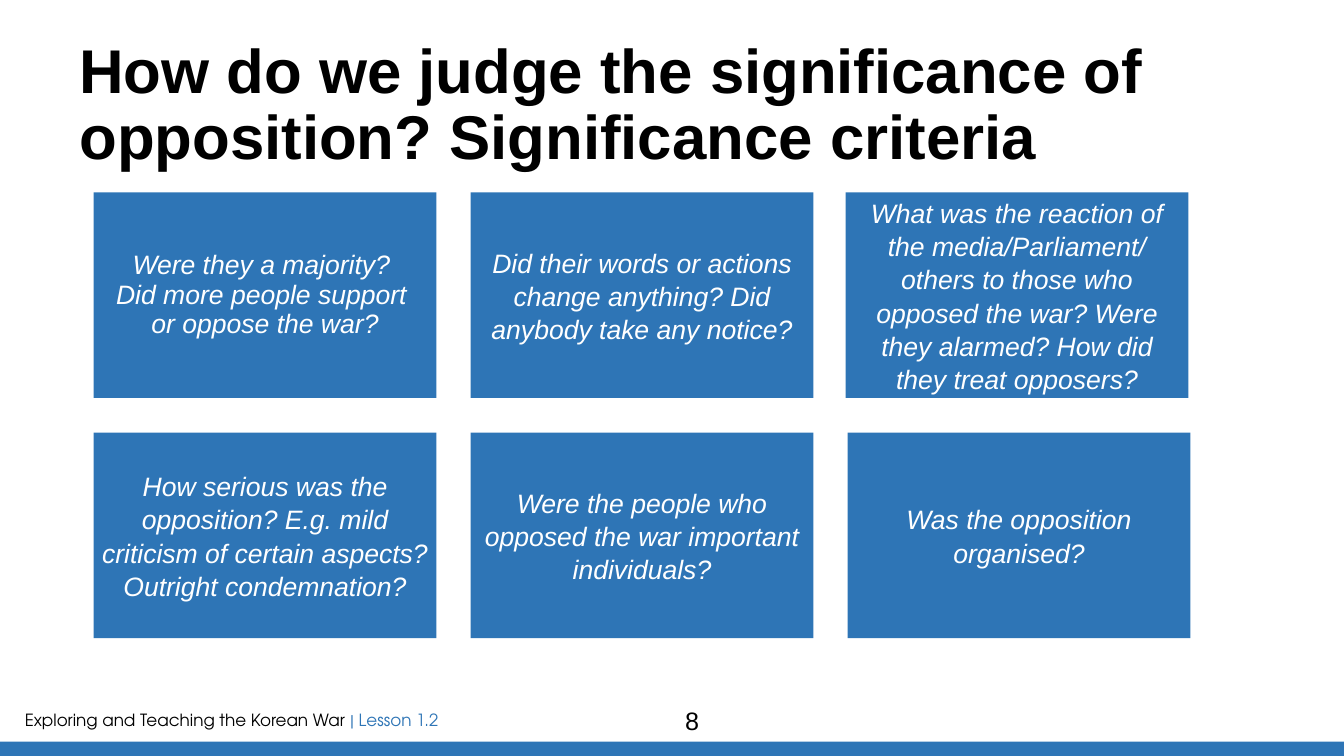
"""Build the slide on judging the significance of opposition."""
from pptx import Presentation
from pptx.dml.color import RGBColor as Rgb
from pptx.enum.shapes import MSO_SHAPE as Shape
from pptx.enum.text import MSO_ANCHOR as Anchor, PP_ALIGN as Align
from pptx.util import Cm, Pt

HUE = {"blue": "2E75B6", "black": "000000", "white": "FFFFFF"}
CARDS = [
    "Were they a majority? \vDid more people support \vor oppose the war?",
    "Did their words or actions change anything? Did anybody take any notice?",
    "What was the reaction of the media/Parliament/ others to those who "
    "opposed the war? Were they alarmed? How did they treat opposers?",
    "How serious was the opposition? E.g. mild criticism of certain aspects? "
    "Outright condemnation?",
    "Were the people who opposed the war important individuals?",
    "Was the opposition organised?",
]


def style(font, size, hue, name="Arial"):
    font.name, font.size = name, Pt(size)
    font.color.rgb = Rgb.from_string(HUE[hue])


def block(left, top, width, height):
    box = slide.shapes.add_shape(
        Shape.RECTANGLE, Cm(left), Cm(top), Cm(width), Cm(height))
    box.shadow.inherit = False
    box.fill.solid()
    box.fill.fore_color.rgb = Rgb.from_string(HUE["blue"])
    box.line.fill.background()
    return box


deck = Presentation()
deck.slide_width, deck.slide_height = Cm(33.87), Cm(19.05)
slide = deck.slides.add_slide(deck.slide_layouts[5])

block(0, 18.69, 33.87, 0.36)

title = slide.shapes.title
title.left, title.top, title.width, title.height = Cm(2), Cm(1), Cm(29.2), Cm(3.68)
frame = title.text_frame
frame.margin_left = frame.margin_right = frame.margin_top = frame.margin_bottom = 0
frame.vertical_anchor = Anchor.TOP
frame.word_wrap = True
frame.text = "How do we judge the significance of opposition? Significance criteria"
head = frame.paragraphs[0]
head.alignment, head.line_spacing = Align.LEFT, 0.9
head.font.bold = True
style(head.font, 44.1, "black")

for spot, text in enumerate(CARDS):
    row, col = divmod(spot, 3)
    left = 21.31 if spot == 2 else 2.36 + 9.5 * col
    card = block(left, 4.85 + 6.05 * row, 8.64, 5.18)
    frame = card.text_frame
    frame.margin_left = frame.margin_right = Cm(0.2)
    frame.margin_top = frame.margin_bottom = Cm(0.2)
    frame.vertical_anchor = Anchor.MIDDLE
    frame.word_wrap = True
    frame.text = text
    para = frame.paragraphs[0]
    para.alignment = Align.CENTER
    para.line_spacing = 0.93 if spot == 0 else 1.04
    para.font.italic = True
    style(para.font, 19, "white")

foot = slide.shapes.add_textbox(Cm(0.38), Cm(17.75), Cm(11.46), Cm(0.76))
foot.text_frame.word_wrap = True
para = foot.text_frame.paragraphs[0]
for text, hue in [("Exploring and Teaching the Korean War ", "black"),
                  ("| Lesson 1.2", "blue")]:
    run = para.add_run()
    run.text = text
    style(run.font, 12, hue, "TeX Gyre Adventor")

page = slide.shapes.add_textbox(Cm(11), Cm(17.65), Cm(12.88), Cm(1.02))
page.text_frame.word_wrap = True
page.text_frame.text = "8"
para = page.text_frame.paragraphs[0]
para.alignment = Align.CENTER
style(para.font, 18, "black")

deck.save("out.pptx")
